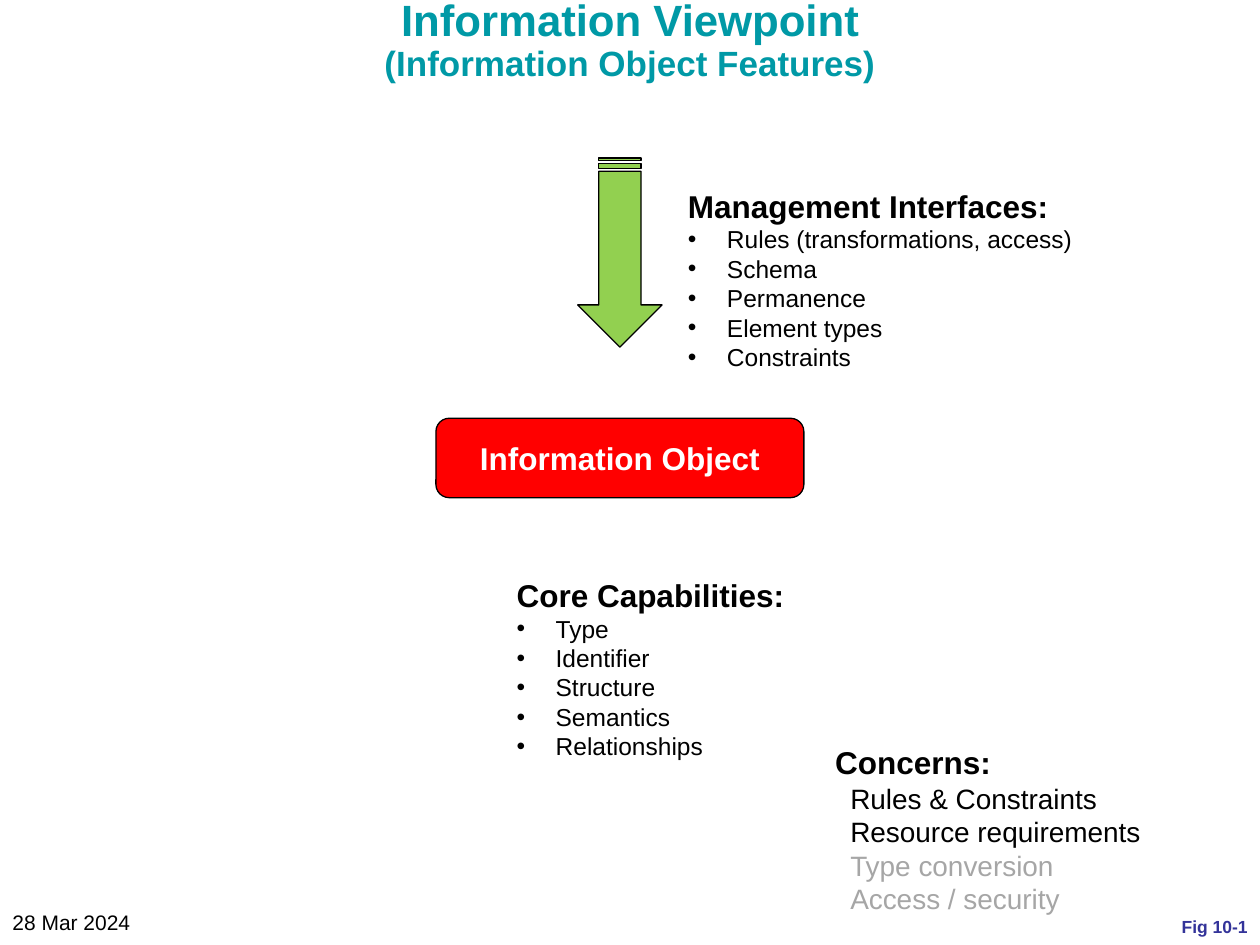
import pptx
import pptx.util
import pptx.dml.color
import pptx.enum.shapes
import pptx.enum.text
import lxml.etree

INK = {"teal": "0099A6", "black": "000000", "white": "FFFFFF", "red": "FF0000",
       "green": "92D050", "gray": "A6A6A6", "navy": "333399"}
Pt = pptx.util.Pt
Inches = pptx.util.Inches
RGB = pptx.dml.color.RGBColor.from_string
ALIGN = pptx.enum.text.PP_ALIGN
ANCHOR = pptx.enum.text.MSO_ANCHOR
SHAPE = pptx.enum.shapes.MSO_SHAPE

deck = pptx.Presentation()
deck.slide_width, deck.slide_height = Inches(10), Inches(7.5)
slide = deck.slides.add_slide(deck.slide_layouts[3])  # title and two lists
shapes = slide.shapes


def share(x, y, w, h):
    """Turn percents of the slide into left, top, width, height."""
    wide, high = deck.slide_width, deck.slide_height
    return [round(part * full / 100)
            for part, full in ((x, wide), (y, high), (w, wide), (h, high))]


def write(box, lines, align=ALIGN.LEFT, anchor=ANCHOR.TOP, wrap=False):
    """Fill a box with lines of (text, size, bold, colour)."""
    frame = box.text_frame
    frame.text = "\n".join(line[0] for line in lines)
    frame.auto_size = pptx.enum.text.MSO_AUTO_SIZE.NONE
    frame.word_wrap = wrap
    frame.vertical_anchor = anchor
    for para, (text, size, bold, ink) in zip(frame.paragraphs, lines):
        para.alignment = align
        para.space_before = Pt(0)
        for run in para.runs:
            run.font.name = "Arial"
            run.font.size = Pt(size)
            run.font.bold = bold
            run.font.color.rgb = RGB(INK[ink])


# Title
title = shapes.title
title.left, title.top, title.width, title.height = share(12.9, -0.8, 74.2, 6.4)
write(title, [("Information Viewpoint", 25, True, "teal"),
              ("(Information Object Features)", 20, True, "teal")],
      ALIGN.CENTER, wrap=True)
for para in title.text_frame.paragraphs:
    para.line_spacing = 0.9

# Object box and the arrow that points down to it
for kind, spot, fill, turn in (
        (SHAPE.ROUNDED_RECTANGLE, (34.6, 44.27, 29.2, 8.4), "red", 0),
        (SHAPE.STRIPED_RIGHT_ARROW, (41.7, 22.27, 15, 8.93), "green", 90)):
    part = shapes.add_shape(kind, *share(*spot))
    part.rotation = turn
    part.shadow.inherit = False
    part.fill.solid()
    part.fill.fore_color.rgb = RGB(INK[fill])
    part.line.color.rgb = RGB(INK["black"])
    part.line.width = Pt(0.75)
    if fill == "red":
        write(part, [("Information Object", 18, True, "white")],
              ALIGN.CENTER, ANCHOR.MIDDLE)

# Bulleted lists
lists = [
    ((53.6, 19.07, 32.7, 21.07), "Management Interfaces:",
     ["Rules (transformations, access)", "Schema", "Permanence",
      "Element types", "Constraints"]),
    ((40, 60.27, 23.5, 21.07), "Core Capabilities:",
     ["Type", "Identifier", "Structure", "Semantics", "Relationships"]),
]
for slot, (spot, head, items) in zip((1, 2), lists):
    body = slide.placeholders[slot]
    body.left, body.top, body.width, body.height = share(*spot)
    write(body, [(head, 18, True, "black")]
          + [(item, 14, False, "black") for item in items])
    for row, para in enumerate(body.text_frame.paragraphs):
        props = para._p.get_or_add_pPr()
        dent = Inches(0.31) if row else 0
        props.set("marL", str(dent))
        props.set("indent", str(-dent))
        mark = "buChar" if row else "buNone"
        node = lxml.etree.SubElement(props, pptx.oxml.ns.qn("a:" + mark))
        if row:
            node.set("char", "•")

# Concerns, with the lines below the heading set in
box = shapes.add_textbox(*share(65.3, 78, 26.6, 20))
write(box, [("Concerns:", 18, True, "black"),
            ("Rules & Constraints", 16, False, "black"),
            ("Resource requirements", 16, False, "black"),
            ("Type conversion", 16, False, "gray"),
            ("Access / security", 16, False, "gray")])
for para in box.text_frame.paragraphs[1:]:
    para._p.get_or_add_pPr().set("marL", str(Inches(0.12)))

# Date and figure number
date = shapes.add_textbox(*share(0, 95.6, 20.8, 6.67))
write(date, [("28 Mar 2024", 12, False, "black")], wrap=True)
label = shapes.add_textbox(*share(81.1, 96.13, 18.9, 3.87))
write(label, [("Fig 10-1", 10, True, "navy")], ALIGN.RIGHT, ANCHOR.MIDDLE, True)

deck.save("out.pptx")
